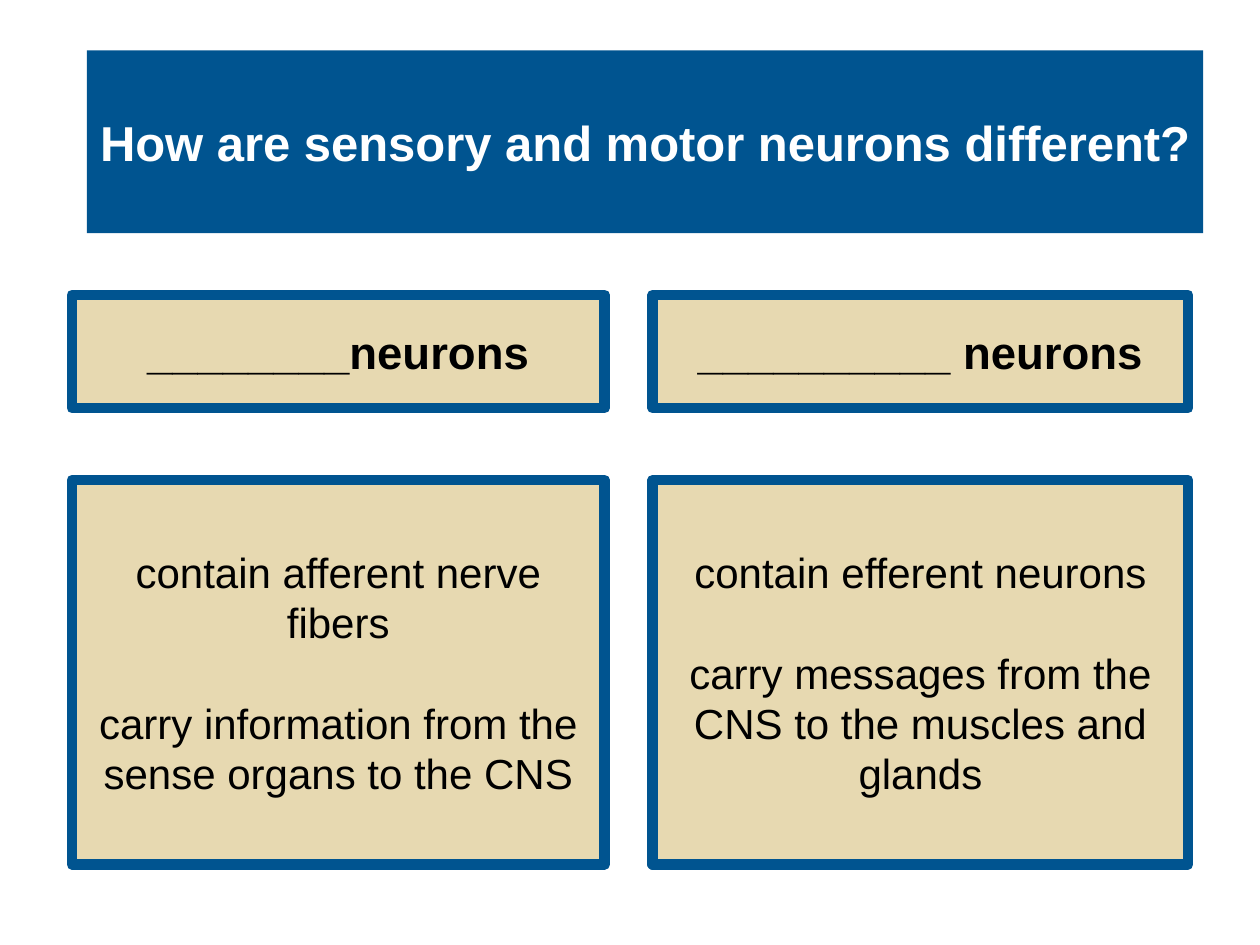
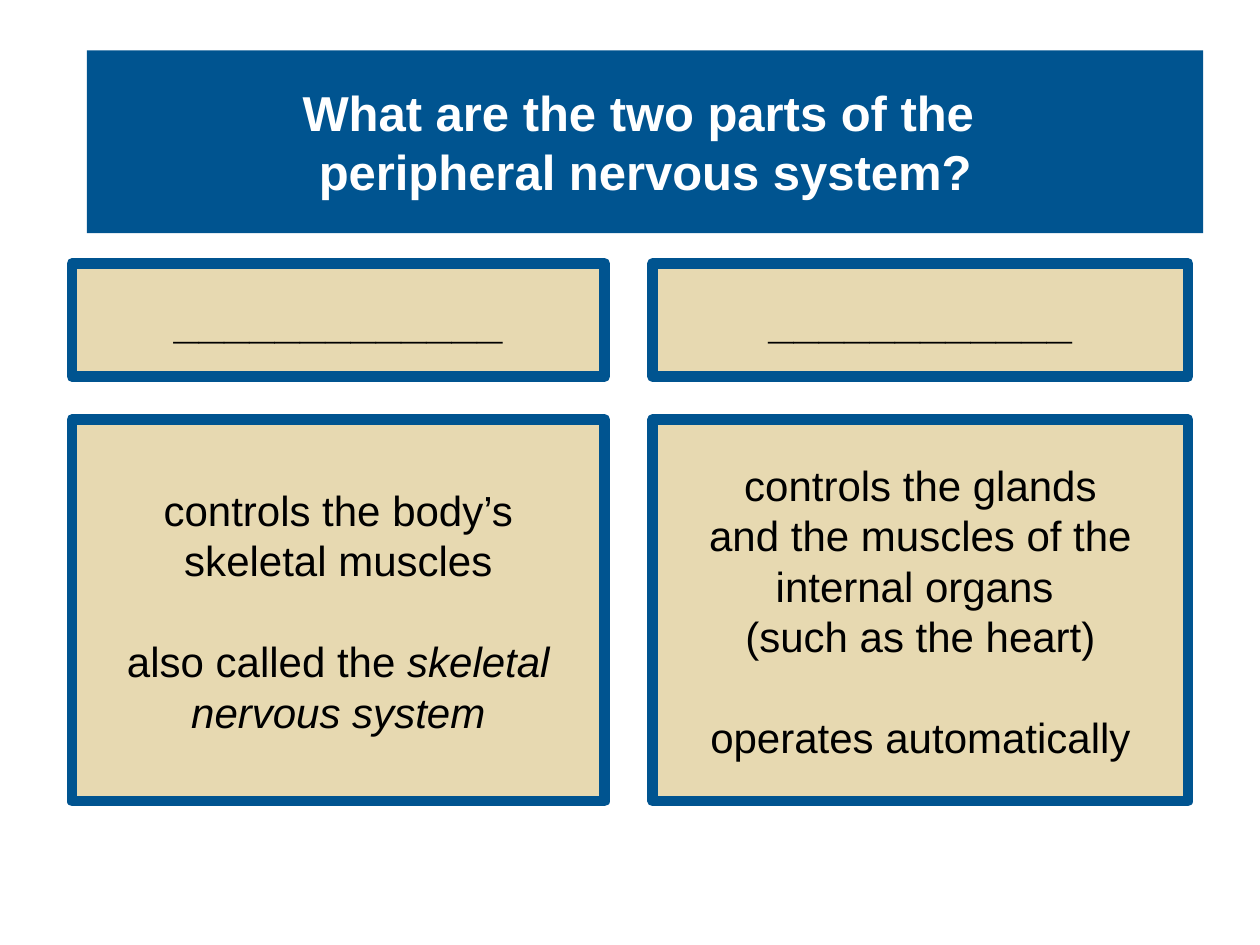
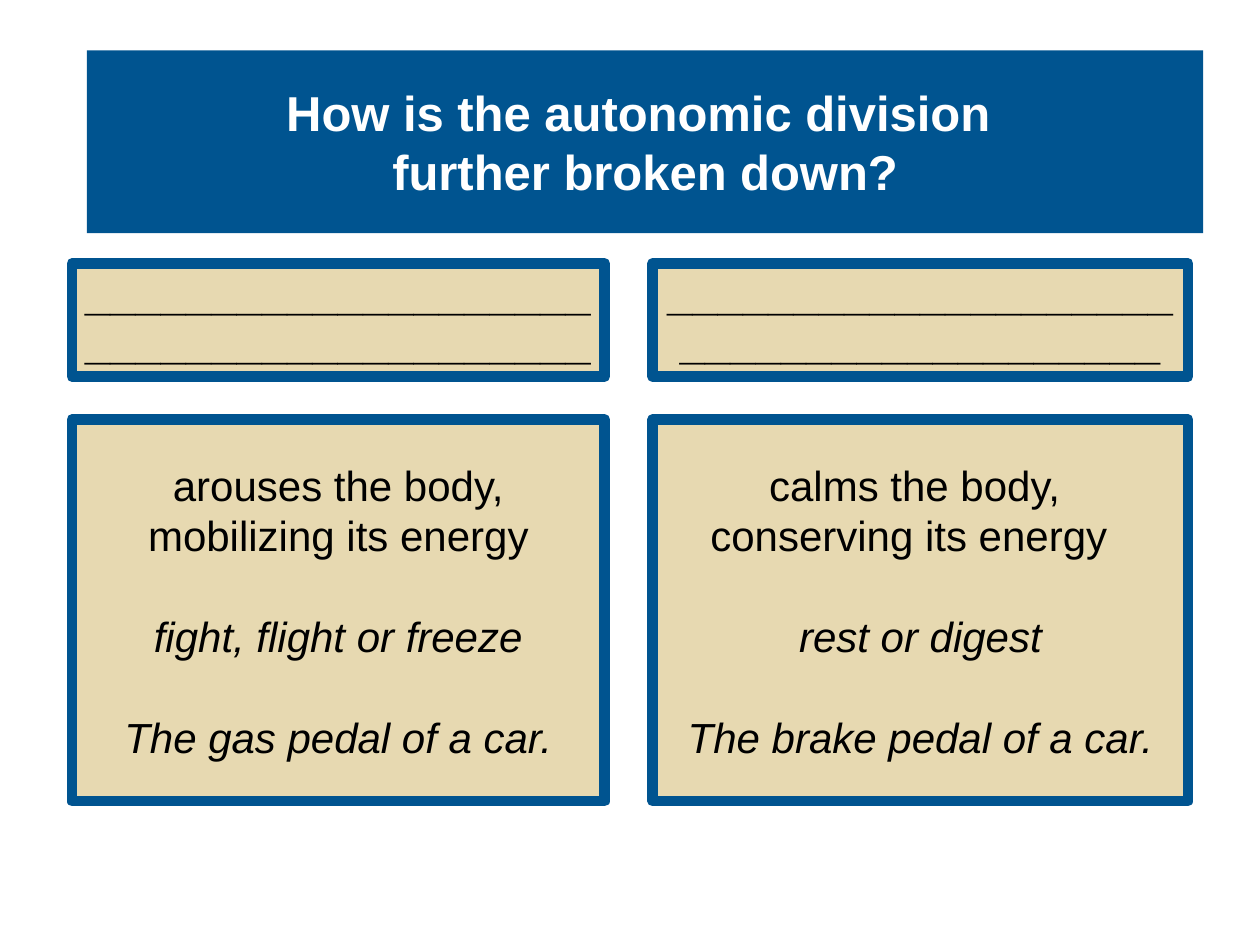
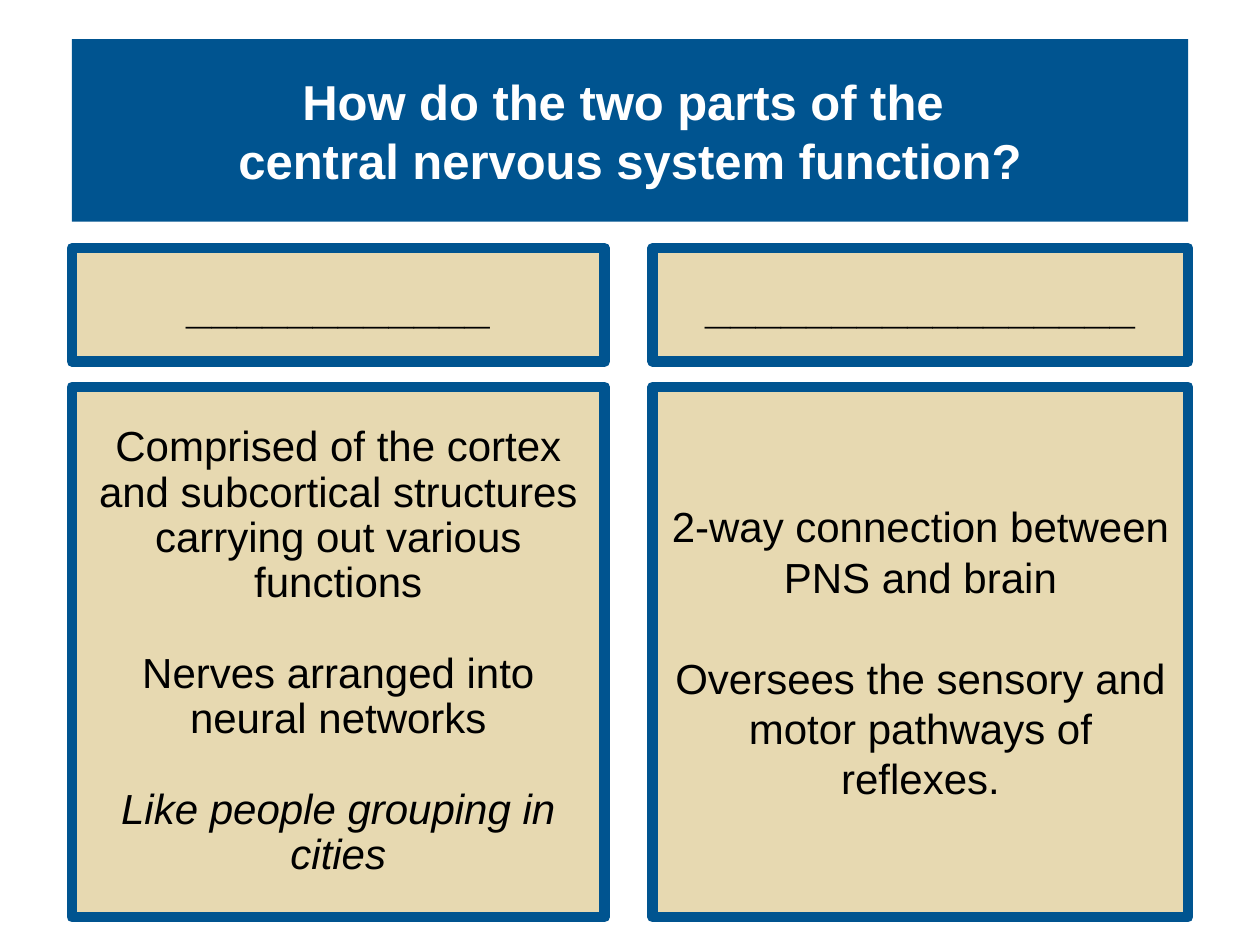
from pptx import Presentation
from pptx.dml.color import RGBColor
from pptx.enum.shapes import MSO_SHAPE
from pptx.enum.text import MSO_ANCHOR, PP_ALIGN
from pptx.oxml.ns import qn
from pptx.util import Inches, Pt
from lxml.etree import SubElement

COLOURS = {"blue": "005490", "sand": "E7D9B1", "black": "000000", "white": "FFFFFF"}
GRID_COLUMNS, GRID_ROWS = 100, 75
CELL = Inches(0.1)
CARD_COLUMNS = [(5.7, 42.3), (51.8, 42.5)]
TITLE_WIDTH, TITLE_HEIGHT, HEADING_HEIGHT = 88.6, 14.5, 9
FORMATS = {
    "title": {"size": Pt(28), "bold": True, "colour": "white"},
    "heading": {"size": Pt(26), "bold": True, "colour": "black"},
    "body": {"size": Pt(24), "bold": False, "colour": "black"},
}
LINE_HEIGHT = 1.2


def colour(name):
    return RGBColor.from_string(COLOURS[name])


def add_span(para, text, style, italic):
    span = para.add_run()
    span.text = text
    span.font.color.rgb = colour(style["colour"])
    values = {"name": "Arial", "size": style["size"], "bold": style["bold"], "italic": italic}
    for name, value in values.items():
        setattr(span.font, name, value)


def write_para(para, text, style, spacing, gap):
    values = {"alignment": PP_ALIGN.CENTER, "line_spacing": spacing, "space_after": Pt(0),
              "space_before": Pt(style["size"].pt * LINE_HEIGHT * spacing) if gap else Pt(0)}
    for name, value in values.items():
        setattr(para, name, value)
    for number, line in enumerate(text.split("\n")):
        if number:
            para.add_line_break()
        for index, piece in enumerate(line.split("*")):
            if piece:
                add_span(para, piece, style, index % 2 == 1)


def add_box(page, place, fill, groups, style, spacing=1.0, outlined=True):
    box = page.shapes.add_shape(MSO_SHAPE.RECTANGLE, *(round(length * CELL) for length in place))
    box.shadow.inherit = False
    box.fill.solid()
    box.fill.fore_color.rgb = colour(fill)
    if outlined:
        box.line.color.rgb = colour("blue")
        box.line.width = Pt(6)
        SubElement(box.line._get_or_add_ln(), qn("a:round"))
    else:
        box.line.fill.background()
    frame = box.text_frame
    for name, value in {"word_wrap": True, "vertical_anchor": MSO_ANCHOR.MIDDLE}.items():
        setattr(frame, name, value)
    para = None
    for group in groups:
        for index, text in enumerate(group):
            gap = para is not None and index == 0
            para = frame.paragraphs[0] if para is None else frame.add_paragraph()
            write_para(para, text, FORMATS[style], spacing, gap)


def add_title(page, text, left=6.9, top=4):
    place = (left, top, TITLE_WIDTH, TITLE_HEIGHT)
    add_box(page, place, "blue", [[text]], "title", outlined=False)


def add_cards(page, heading_top, body_top, body_height, cards):
    for (left, width), card in zip(CARD_COLUMNS, cards):
        add_box(page, (left, heading_top, width, HEADING_HEIGHT), "sand",
                [[card["heading"]]], "heading", card.get("heading_spacing", 1.0))
        add_box(page, (left, body_top, width, body_height), "sand",
                card["body"], "body", card.get("body_spacing", 1.0))


def add_page(deck):
    return deck.slides.add_slide(deck.slide_layouts[6])


def add_neuron_types(deck):
    page = add_page(deck)
    add_title(page, "How are sensory and motor neurons different?")
    add_cards(page, 23.4, 38.1, 30.5, [
        {"heading": "________neurons",
         "body": [["contain afferent nerve fibers"],
                  ["carry information from the sense organs to the CNS"]]},
        {"heading": "__________ neurons",
         "body": [["contain efferent neurons"],
                  ["carry messages from the CNS to the muscles and glands"]]},
    ])


def add_peripheral_parts(deck):
    page = add_page(deck)
    add_title(page, "What are the two parts of the \nperipheral nervous system?")
    add_cards(page, 20.9, 33.3, 30.3, [
        {"heading": "_____________",
         "body": [["controls the body’s", "skeletal muscles"],
                  ["also called the *skeletal nervous system*"]]},
        {"heading": "____________",
         "body": [["controls the glands", "and the muscles of the internal organs ",
                   "(such as the heart)"],
                  ["operates automatically"]]},
    ])


def add_autonomic_division(deck):
    page = add_page(deck)
    add_title(page, "How is the autonomic division \nfurther broken down?")
    add_cards(page, 20.9, 33.3, 30.3, [
        {"heading": "________________________________________", "heading_spacing": 0.9,
         "body": [["arouses the body, mobilizing its energy"],
                  ["*fight, flight or freeze*"],
                  ["*The gas pedal of a car.*"]]},
        {"heading": "_______________________________________", "heading_spacing": 0.9,
         "body": [["calms the body, ", "conserving its energy  "],
                  ["*rest or digest*"],
                  ["*The brake pedal of a car.*"]]},
    ])


def add_central_parts(deck):
    page = add_page(deck)
    add_title(page, "How do the two parts of the \ncentral nervous system function?", 5.7, 3.1)
    add_cards(page, 19.7, 30.7, 42.1, [
        {"heading": "____________", "body_spacing": 0.9,
         "body": [["Comprised of the cortex and subcortical structures "
                   "carrying out various functions"],
                  ["Nerves arranged into neural networks"],
                  ["*Like people grouping in cities*"]]},
        {"heading": "_________________",
         "body": [["2-way connection between PNS and brain"],
                  ["Oversees the sensory and motor pathways of reflexes."]]},
    ])


def main():
    deck = Presentation()
    deck.slide_width = GRID_COLUMNS * CELL
    deck.slide_height = GRID_ROWS * CELL
    add_neuron_types(deck)
    add_peripheral_parts(deck)
    add_autonomic_division(deck)
    add_central_parts(deck)
    deck.save("out.pptx")


if __name__ == "__main__":
    main()
